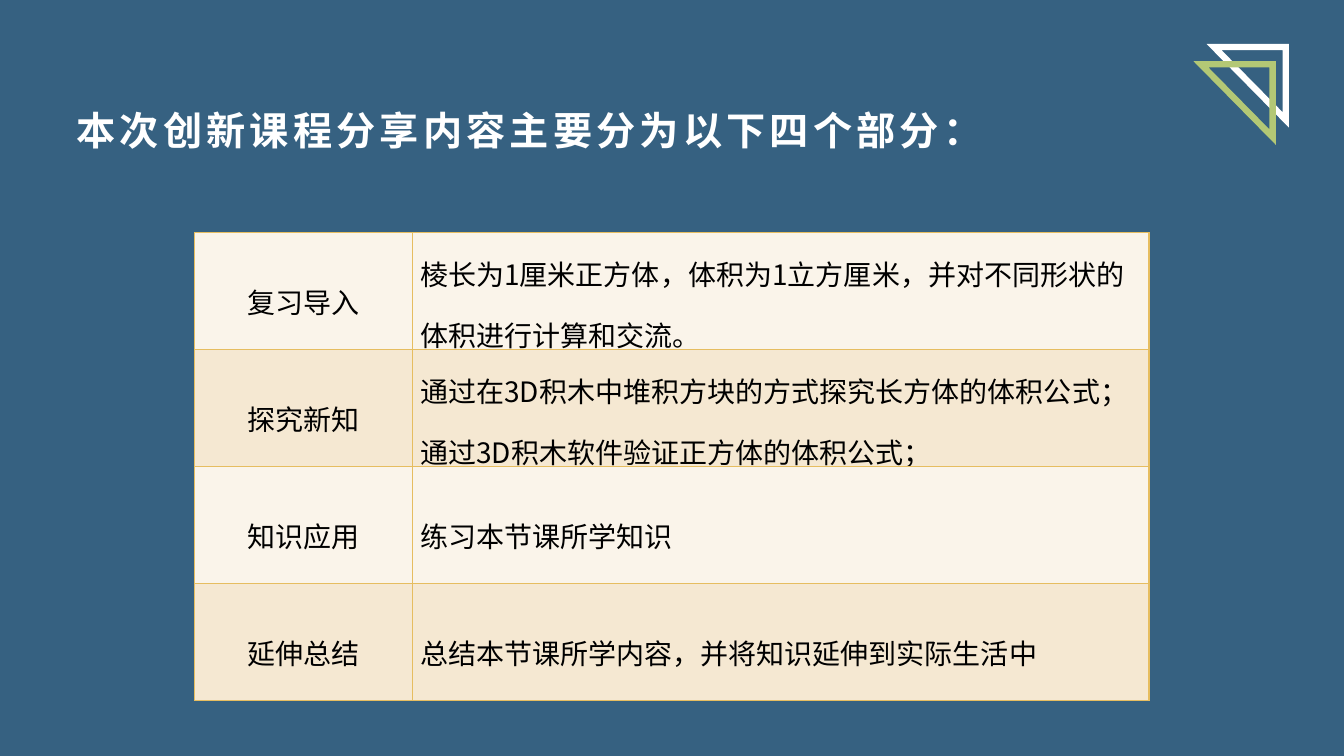
"""Build the overview slide listing the four parts of the lesson."""
import pptx
import pptx.dml.color
import pptx.enum.shapes
import pptx.enum.text
import pptx.oxml.ns
import pptx.util
from lxml import etree

Pt = pptx.util.Pt
RGBColor = pptx.dml.color.RGBColor
qn = pptx.oxml.ns.qn
MIDDLE = pptx.enum.text.MSO_ANCHOR.MIDDLE
ALIGN = pptx.enum.text.PP_ALIGN

TITLE = "本次创新课程分享内容主要分为以下四个部分："
PARTS = [
    ("复习导入", ["棱长为1厘米正方体，体积为1立方厘米，并对不同形状的体积进行计算和交流。"]),
    ("探究新知", ["通过在3D积木中堆积方块的方式探究长方体的体积公式；",
              "通过3D积木软件验证正方体的体积公式；"]),
    ("知识应用", ["练习本节课所学知识"]),
    ("延伸总结", ["总结本节课所学内容，并将知识延伸到实际生活中"]),
]

BLUE = RGBColor(0x36, 0x61, 0x81)
WHITE = RGBColor(0xFF, 0xFF, 0xFF)
GREEN = RGBColor(0xB3, 0xC8, 0x75)
BLACK = RGBColor(0x00, 0x00, 0x00)
GOLD = RGBColor(0xE6, 0xBD, 0x60)
BANDS = [RGBColor(0xFA, 0xF4, 0xEA), RGBColor(0xF5, 0xE8, 0xD2)]

LATIN_FONT = "Arial"
CHINESE_FONT = "Noto Sans CJK SC"
TRIANGLES = [(867.2, 33.6, WHITE), (857.8, 45.9, GREEN)]
TRIANGLE_WIDTH, TRIANGLE_HEIGHT = 51.2, 52
TABLE_LEFT, TABLE_TOP = 139.2, 166.2
COLUMN_WIDTHS = [155.5, 526]
ROW_HEIGHT = 83.5


def add_span(para, text, font, size, color):
    span = para.add_run()
    span.text = text
    span.font.name = font
    span.font.size = Pt(size)
    span.font.color.rgb = color
    properties = span.font._element
    properties.set("lang", "zh-CN")
    etree.SubElement(properties, qn("a:ea"), typeface=CHINESE_FONT)
    return span


def add_triangle(page, left, top, color):
    triangle = page.shapes.add_shape(
        pptx.enum.shapes.MSO_SHAPE.RIGHT_TRIANGLE,
        Pt(left), Pt(top), Pt(TRIANGLE_WIDTH), Pt(TRIANGLE_HEIGHT))
    triangle.rotation = 180
    triangle.shadow.inherit = False
    triangle.fill.background()
    triangle.line.color.rgb = color
    triangle.line.width = Pt(4.5)
    etree.SubElement(triangle.line._get_or_add_ln(), qn("a:miter"), lim="800000")


def add_title(page):
    box = page.shapes.add_textbox(Pt(47.5), Pt(46), Pt(865), Pt(98))
    frame = box.text_frame
    frame.word_wrap = True
    frame.vertical_anchor = MIDDLE
    para = frame.paragraphs[0]
    para.line_spacing = 0.9
    para.space_after = Pt(8)
    span = add_span(para, TITLE, LATIN_FONT, 28, WHITE)
    span.font.bold = True
    span.font._element.set("spc", "300")


def add_borders(cell):
    properties = cell._tc.get_or_add_tcPr()
    for side in ("a:lnL", "a:lnR", "a:lnT", "a:lnB"):
        line = etree.SubElement(properties, qn(side), w=str(Pt(1)))
        fill = etree.SubElement(line, qn("a:solidFill"))
        etree.SubElement(fill, qn("a:srgbClr"), val=str(GOLD))


def fill_cell(cell, lines, alignment, color):
    add_borders(cell)
    cell.fill.solid()
    cell.fill.fore_color.rgb = color
    cell.vertical_anchor = MIDDLE
    cell.margin_left = cell.margin_right = Pt(5.4)
    cell.margin_top = cell.margin_bottom = Pt(0)
    frame = cell.text_frame
    for index, line in enumerate(lines):
        para = frame.add_paragraph() if index else frame.paragraphs[0]
        para.alignment = alignment
        para.line_spacing = 1.5
        add_span(para, line, CHINESE_FONT, 20, BLACK)


def add_parts_table(page):
    table = page.shapes.add_table(
        len(PARTS), len(COLUMN_WIDTHS), Pt(TABLE_LEFT), Pt(TABLE_TOP),
        Pt(sum(COLUMN_WIDTHS)), Pt(ROW_HEIGHT * len(PARTS))).table
    table.first_row = False
    table.horz_banding = False
    for column, width in zip(table.columns, COLUMN_WIDTHS):
        column.width = Pt(width)
    for index, (name, details) in enumerate(PARTS):
        table.rows[index].height = Pt(ROW_HEIGHT)
        band = BANDS[index % len(BANDS)]
        fill_cell(table.cell(index, 0), [name], ALIGN.CENTER, band)
        fill_cell(table.cell(index, 1), details, ALIGN.LEFT, band)


def main():
    deck = pptx.Presentation()
    deck.slide_width, deck.slide_height = Pt(960), Pt(540)
    page = deck.slides.add_slide(deck.slide_layouts[6])
    page.background.fill.solid()
    page.background.fill.fore_color.rgb = BLUE
    for left, top, color in TRIANGLES:
        add_triangle(page, left, top, color)
    add_title(page)
    add_parts_table(page)
    deck.save("out.pptx")


if __name__ == "__main__":
    main()
